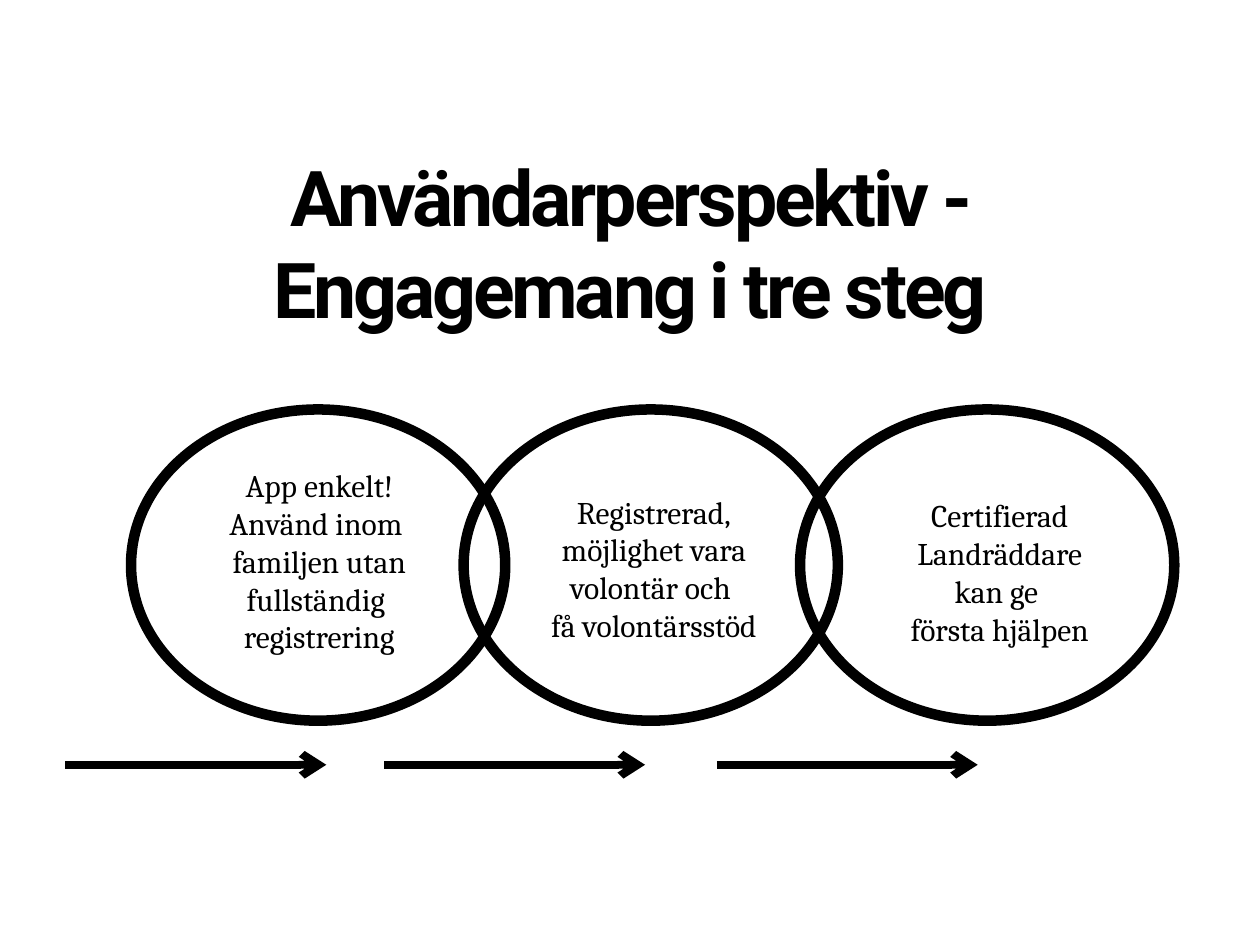
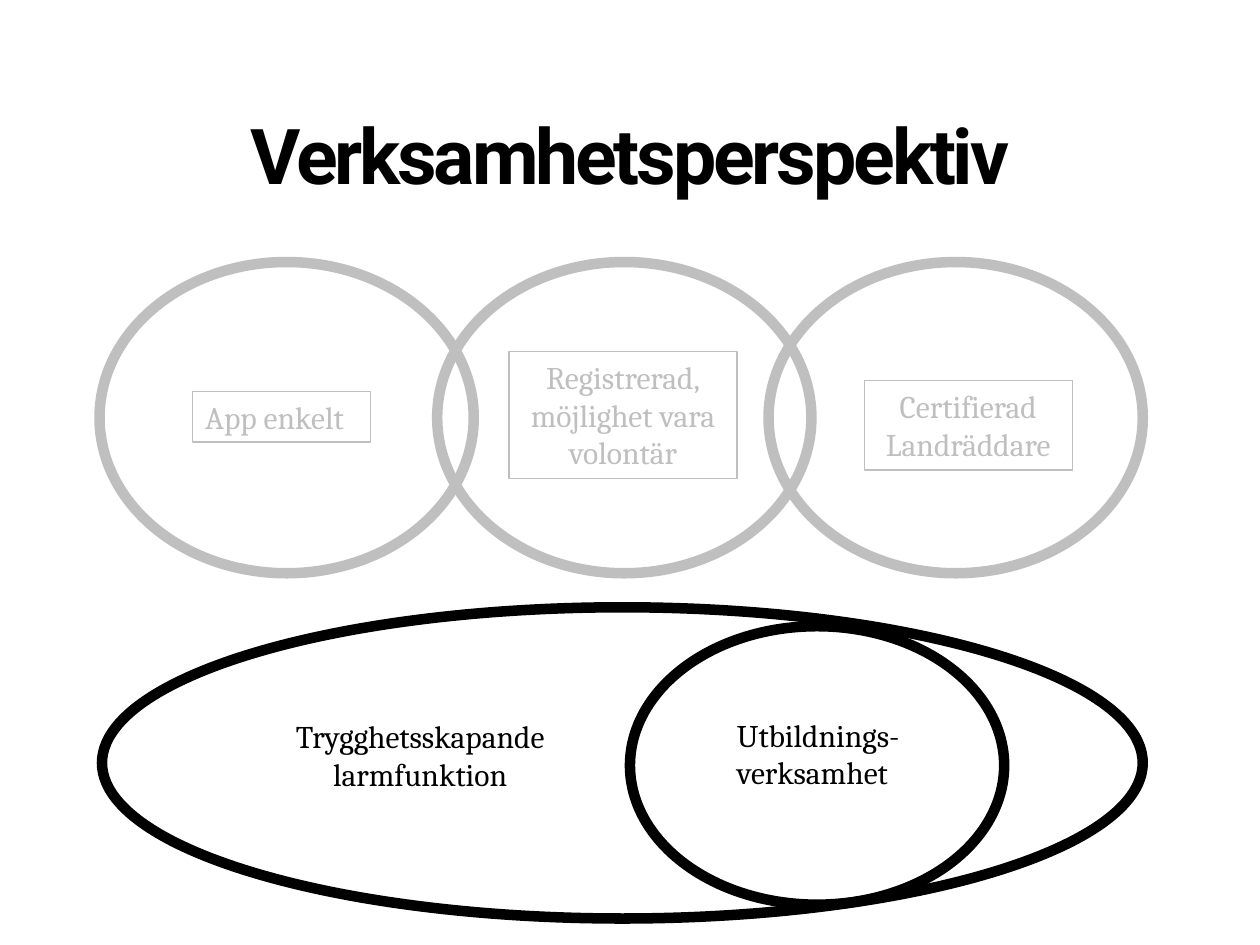
from lxml import etree
from pptx import Presentation
from pptx.dml.color import RGBColor
from pptx.enum.shapes import MSO_CONNECTOR, MSO_SHAPE
from pptx.enum.text import MSO_ANCHOR, MSO_AUTO_SIZE, PP_ALIGN
from pptx.oxml.ns import qn
from pptx.util import Inches, Pt

BLACK = RGBColor(0x00, 0x00, 0x00)
GREY = RGBColor(0xBF, 0xBF, 0xBF)
TITLE_FONT, BODY_FONT = "Roboto", "Cambria"
LEFT, CENTER = PP_ALIGN.LEFT, PP_ALIGN.CENTER
TOP, MIDDLE = MSO_ANCHOR.TOP, MSO_ANCHOR.MIDDLE
OVAL, STRAIGHT = MSO_SHAPE.OVAL, MSO_CONNECTOR.STRAIGHT
FIT_SHAPE = MSO_AUTO_SIZE.SHAPE_TO_FIT_TEXT

RING_WIDTH, RING_HEIGHT = 2.97, 2.47
ARROW_LENGTH = 2.07


def add_text(slide, text, box, font=BODY_FONT, size=18, color=BLACK, bold=False,
             align=CENTER, anchor=TOP, spacing=None, wrap=False, border=None):
    """Write one paragraph per line; a vertical tab breaks a line within one."""
    label = slide.shapes.add_textbox(*map(Inches, box))
    if border is not None:
        label.line.color.rgb = border
        label.line.width = Pt(0.75)
    frame = label.text_frame
    frame.word_wrap = wrap
    frame.auto_size = FIT_SHAPE
    frame.vertical_anchor = anchor
    for index, line in enumerate(text.split("\n")):
        paragraph = frame.add_paragraph() if index else frame.paragraphs[0]
        paragraph.text = line
        paragraph.alignment = align
        for run in paragraph.runs:
            run.font.name = font
            run.font.size = Pt(size)
            run.font.bold = bold
            run.font.color.rgb = color
            if spacing is not None:
                run.font._element.set("spc", str(round(spacing * 100)))


def add_title(slide, text, top, height):
    add_text(slide, text, (0.61, top, 8.78, height), font=TITLE_FONT, size=44,
             bold=True, anchor=MIDDLE, spacing=-1.8, wrap=True)


def add_ring(slide, left, top, width=RING_WIDTH, height=RING_HEIGHT, color=BLACK):
    ring = slide.shapes.add_shape(OVAL, *map(Inches, (left, top, width, height)))
    ring.shadow.inherit = False
    ring.fill.background()
    ring.line.color.rgb = color
    ring.line.width = Pt(6)


def add_arrow(slide, left, y):
    arrow = slide.shapes.add_connector(
        STRAIGHT, *map(Inches, (left, y, left + ARROW_LENGTH, y)))
    arrow.line.color.rgb = BLACK
    arrow.line.width = Pt(4.5)
    etree.SubElement(arrow.line._get_or_add_ln(), qn("a:tailEnd"), type="arrow")
    etree.SubElement(arrow._element.spPr, qn("a:effectLst"))


def build_user_slide(slide):
    add_title(slide, "Användarperspektiv - Engagemang i tre steg", 1.13, 1.58)

    # Three linked steps
    steps = [
        (1.04, "App enkelt!\nAnvänd inom \vfamiljen utan\nfullständig \nregistrering",
         (1.65, 3.65, 1.77, 1.62)),
        (3.68, "Registrerad,\nmöjlighet vara\nvolontär och \nfå volontärsstöd",
         (4.19, 3.86, 2, 1.31)),
        (6.35, "Certifierad\nLandräddare\nkan ge \nförsta hjälpen",
         (7.06, 3.89, 1.75, 1.31)),
    ]
    for ring_left, text, box in steps:
        add_ring(slide, ring_left, 3.25)
        add_text(slide, text, box)

    # Progress arrows
    for arrow_left in (0.52, 3.05, 5.69):
        add_arrow(slide, arrow_left, 6.07)


def build_operations_slide(slide):
    add_title(slide, "Verksamhetsperspektiv", 0.8, 0.84)

    # The user steps, toned down
    steps = [
        (0.79, "App enkelt", (1.53, 3.11, 1.41, 0.4), LEFT),
        (3.47, "Registrerad,\nmöjlighet vara\nvolontär", (4.04, 2.79, 1.81, 1.01), CENTER),
        (6.1, "Certifierad\nLandräddare", (6.86, 3.02, 1.65, 0.71), CENTER),
    ]
    for ring_left, text, box, align in steps:
        add_ring(slide, ring_left, 2.08, color=GREY)
        add_text(slide, text, box, color=GREY, align=align, border=GREY)

    # Alarm function with training inside it
    add_ring(slide, 0.81, 4.82, width=8.26)
    add_ring(slide, 5, 4.97, height=2.21)
    add_text(slide, "Utbildnings-\nverksamhet", (5.75, 5.63, 1.62, 0.71), align=LEFT)
    add_text(slide, "Trygghetsskapande\nlarmfunktion", (2.15, 5.64, 2.37, 0.71))


def main():
    deck = Presentation()
    deck.slide_width, deck.slide_height = Inches(10), Inches(7.5)
    blank = deck.slide_layouts[6]
    for build in (build_user_slide, build_operations_slide):
        build(deck.slides.add_slide(blank))
    deck.save("out.pptx")


if __name__ == "__main__":
    main()
